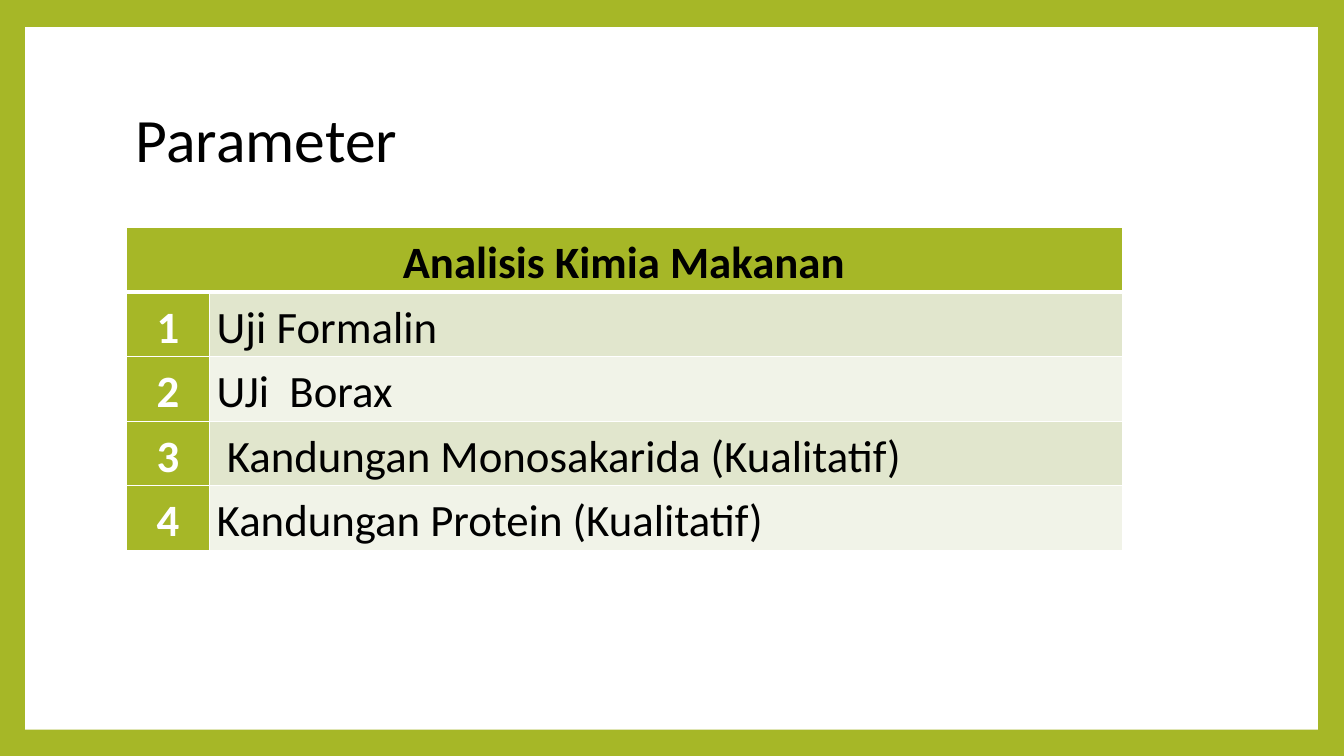
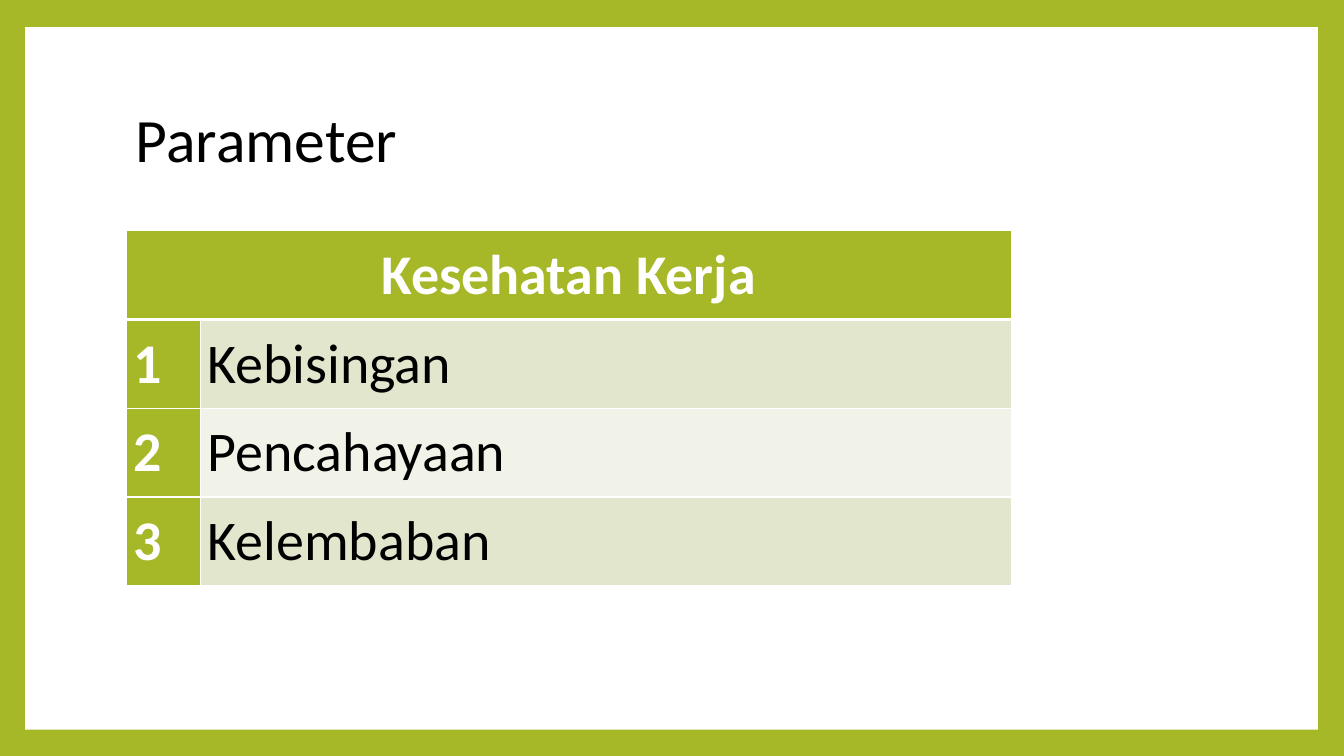
from dataclasses import dataclass

from lxml.etree import SubElement
from pptx import Presentation
from pptx.dml.color import RGBColor as RGB
from pptx.enum.shapes import MSO_SHAPE as Shape
from pptx.enum.text import MSO_ANCHOR as Anchor, PP_ALIGN as Align
from pptx.oxml.ns import qn
from pptx.util import Inches, Pt

# Content: one entry per slide
SLIDES = [
    dict(
        title="Parameter",
        heading="Analisis Kimia Makanan",
        tests=["Uji Formalin", "UJi  Borax",
               " Kandungan Monosakarida (Kualitatif)",
               "Kandungan Protein (Kualitatif)"],
        top=2.26, columns=(0.83, 9.05), row=0.64, size=32,
        heading_color="000000", number_align=Align.CENTER,
    ),
    dict(
        title="Parameter",
        heading="Kesehatan Kerja",
        tests=["Kebisingan", "Pencahayaan", "Kelembaban"],
        top=2.29, columns=(0.74, 8.04), row=0.88, size=40,
        heading_color="FFFFFF", number_align=Align.LEFT,
    ),
]


@dataclass(frozen=True)
class Theme:
    font: str = "Calibri"
    green: str = "A6B727"
    white: str = "FFFFFF"
    black: str = "000000"
    bands: tuple = ("E1E6CD", "F1F3E8")
    title_size: int = 44
    rule: int = 1
    heading_rule: int = 3


THEME = Theme()
WIDTH, HEIGHT = 13.33, 7.5
LEFT = 1.25
PANEL = (0.25, 0.27, 12.82, 6.97)
TITLE = (LEFT, 0.67, 10.8, 1.48)


def paint(fill, color):
    fill.solid()
    fill.fore_color.rgb = RGB.from_string(color)


def write(frame, text, size, color, bold=False, align=Align.LEFT, spacing=1.0):
    paragraph = frame.paragraphs[0]
    paragraph.alignment = align
    paragraph.line_spacing = spacing
    run = paragraph.add_run()
    run.text = text
    run.font.name = THEME.font
    run.font.size = Pt(size)
    run.font.bold = bold
    run.font.color.rgb = RGB.from_string(color)


def rule_cell(cell, top, bottom):
    """White borders; called before the fill, which must follow them."""
    sides = dict(L=THEME.rule, R=THEME.rule, T=top, B=bottom)
    properties = cell._tc.get_or_add_tcPr()
    for side, points in sides.items():
        line = SubElement(properties, qn(f"a:ln{side}"), w=str(Pt(points)))
        solid = SubElement(line, qn("a:solidFill"))
        SubElement(solid, qn("a:srgbClr"), val=THEME.white)


def style_cell(cell, fill, top, bottom):
    cell.margin_left = cell.margin_right = Inches(0.07)
    cell.margin_top = cell.margin_bottom = 0
    rule_cell(cell, top, bottom)
    paint(cell.fill, fill)


def add_frame(slide, title):
    # White panel over the green background
    panel = slide.shapes.add_shape(Shape.RECTANGLE, *map(Inches, PANEL))
    panel.shadow.inherit = False
    paint(panel.fill, THEME.white)
    panel.line.fill.background()

    # Title
    frame = slide.shapes.add_textbox(*map(Inches, TITLE)).text_frame
    frame.word_wrap = True
    frame.vertical_anchor = Anchor.MIDDLE
    write(frame, title, THEME.title_size, THEME.black, spacing=0.9)


def add_tests(slide, content):
    columns, tests = content["columns"], content["tests"]
    count = len(tests) + 1
    table = slide.shapes.add_table(
        count, len(columns), Inches(LEFT), Inches(content["top"]),
        Inches(sum(columns)), Inches(content["row"] * count)).table
    for column, width in zip(table.columns, columns):
        column.width = Inches(width)
    for row in table.rows:
        row.height = Inches(content["row"])

    # Heading across both columns
    heading = table.cell(0, 0)
    heading.merge(table.cell(0, 1))
    for cell in table.rows[0].cells:
        style_cell(cell, THEME.green, THEME.rule, THEME.heading_rule)
    write(heading.text_frame, content["heading"], content["size"],
          content["heading_color"], True, Align.CENTER, 1.15)

    # Numbered tests in alternating bands
    for index, test in enumerate(tests, 1):
        number, name = table.rows[index].cells
        top = THEME.heading_rule if index == 1 else THEME.rule
        style_cell(number, THEME.green, top, THEME.rule)
        style_cell(name, THEME.bands[(index - 1) % 2], top, THEME.rule)
        write(number.text_frame, str(index), content["size"], THEME.white,
              True, content["number_align"], 1.15)
        write(name.text_frame, test, content["size"], THEME.black, spacing=1.15)


def main():
    prs = Presentation()
    prs.slide_width, prs.slide_height = Inches(WIDTH), Inches(HEIGHT)
    paint(prs.slide_master.background.fill, THEME.green)
    for content in SLIDES:
        slide = prs.slides.add_slide(prs.slide_layouts[6])
        add_frame(slide, content["title"])
        add_tests(slide, content)
    prs.save("out.pptx")


if __name__ == "__main__":
    main()
